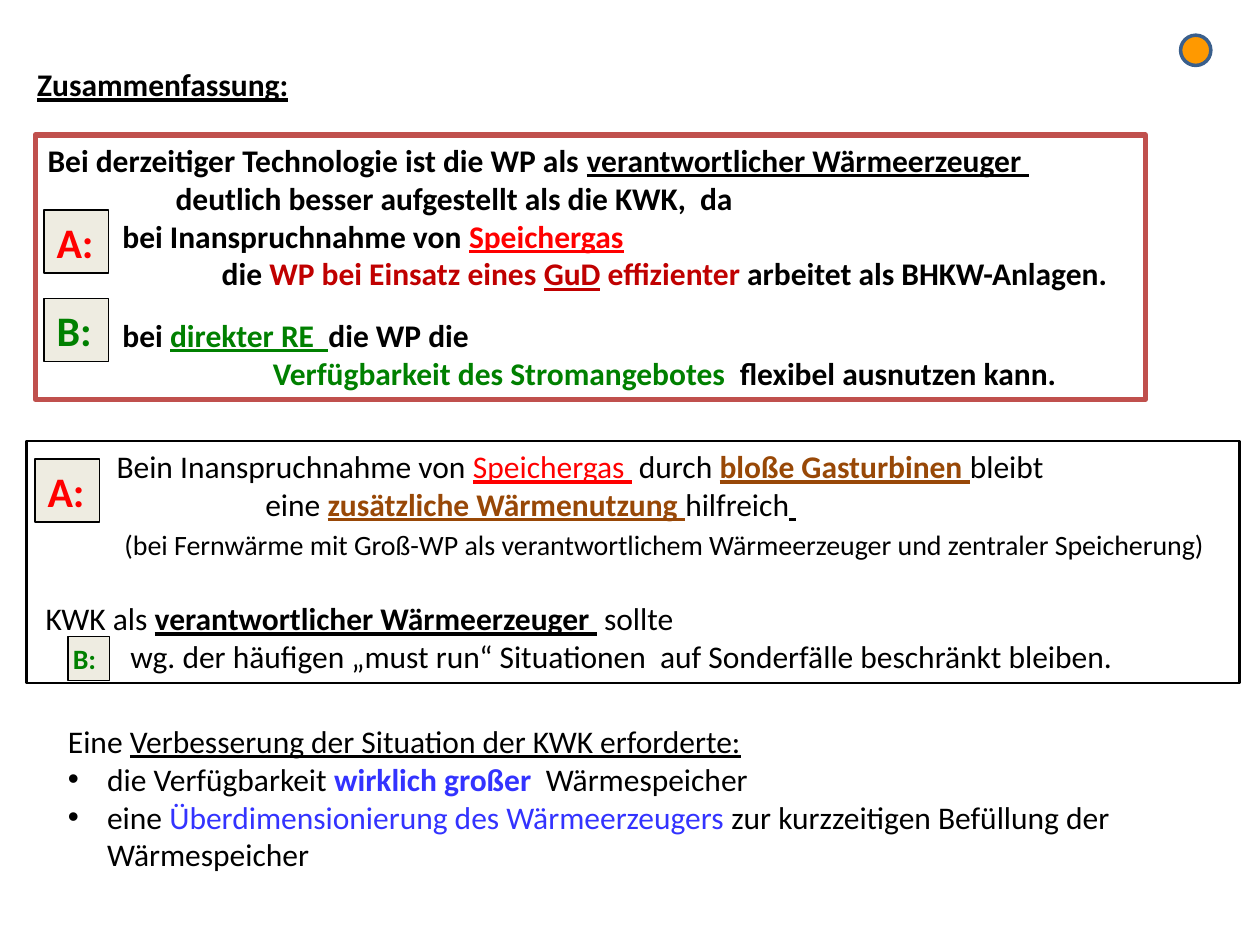
from dataclasses import dataclass

from lxml import etree
from pptx import Presentation
from pptx.dml.color import RGBColor
from pptx.enum.shapes import MSO_SHAPE
from pptx.enum.text import MSO_ANCHOR, PP_ALIGN
from pptx.oxml.ns import qn
from pptx.util import Cm, Pt

RECTANGLE = MSO_SHAPE.RECTANGLE
OVAL = MSO_SHAPE.OVAL
TOP = MSO_ANCHOR.TOP
LEFT = PP_ALIGN.LEFT


@dataclass(frozen=True)
class Theme:
    font: str = "Calibri"
    body: int = 18
    small: int = 16
    badge: int = 24
    black: str = "000000"
    red: str = "FF0000"
    dark_red: str = "C00000"
    green: str = "008000"
    brown: str = "984807"
    blue: str = "3333FF"
    frame: str = "C0504D"
    beige: str = "EEECE1"
    orange: str = "FF9900"
    navy: str = "3A5F8C"


@dataclass(frozen=True)
class Run:
    text: str
    color: str = Theme.black
    bold: bool = False
    underline: bool = False


@dataclass(frozen=True)
class Line:
    runs: tuple
    indent: float = 0
    size: int = Theme.body
    before: float = 0
    bullet: bool = False


class SlideBuilder:
    """Draws styled elements on the current slide."""

    def __init__(self, slide, theme):
        self.slide = slide
        self.theme = theme

    def shape(self, kind, box, line, width, fill=None):
        shape = self.slide.shapes.add_shape(kind, *map(Cm, box))
        shape.shadow.inherit = False
        shape.line.color.rgb = RGBColor.from_string(line)
        shape.line.width = Pt(width)
        if fill:
            shape.fill.solid()
            shape.fill.fore_color.rgb = RGBColor.from_string(fill)
        else:
            shape.fill.background()
        return shape

    def add_lines(self, shape, lines):
        frame = shape.text_frame
        frame.word_wrap = True
        frame.vertical_anchor = TOP
        for index, line in enumerate(lines):
            paragraph = frame.add_paragraph() if index else frame.paragraphs[0]
            paragraph.alignment = LEFT
            paragraph.space_before = Pt(line.before)
            properties = paragraph._p.get_or_add_pPr()
            properties.set("marL", str(Cm(line.indent)))
            properties.set("indent", str(-Cm(line.indent) if line.bullet else 0))
            if line.bullet:
                etree.SubElement(properties, qn("a:buFont"), typeface="Arial")
                etree.SubElement(properties, qn("a:buChar"), char="•")
            for part in line.runs:
                run = paragraph.add_run()
                run.text = part.text
                run.font.name = self.theme.font
                run.font.size = Pt(line.size)
                run.font.bold = part.bold
                run.font.underline = part.underline
                run.font.color.rgb = RGBColor.from_string(part.color)

    def panel(self, box, line, width, lines):
        self.add_lines(self.shape(RECTANGLE, box, line, width), lines)

    def text(self, box, lines):
        self.add_lines(self.slide.shapes.add_textbox(*map(Cm, box)), lines)

    def badge(self, box, label, color, size, inset=None):
        shape = self.shape(RECTANGLE, box, self.theme.black, 1, self.theme.beige)
        if inset is not None:
            frame = shape.text_frame
            frame.margin_left = frame.margin_right = Cm(inset)
            frame.margin_top = frame.margin_bottom = Cm(inset)
        self.add_lines(shape, [Line((Run(label, color, bold=True),), size=size)])

    def marker(self, box):
        self.shape(OVAL, box, self.theme.navy, 2, self.theme.orange)


def main():
    theme = Theme()
    presentation = Presentation()
    presentation.slide_width, presentation.slide_height = Cm(25.4), Cm(19.05)
    slide = presentation.slides.add_slide(presentation.slide_layouts[6])
    builder = SlideBuilder(slide, theme)

    builder.panel((0.71, 2.72, 22.38, 5.33), theme.frame, 3, [
        Line((Run("Bei derzeitiger Technologie ist die WP als ", bold=True),
              Run("verantwortlicher Wärmeerzeuger ", bold=True, underline=True))),
        Line((Run("deutlich besser aufgestellt als die KWK,  da", bold=True),), 2.58),
        Line((Run("bei Inanspruchnahme von ", bold=True),
              Run("Speichergas", theme.red, True, True)), 1.51),
        Line((Run("die ", bold=True),
              Run("WP bei Einsatz eines ", theme.dark_red, True),
              Run("GuD", theme.dark_red, True, True),
              Run(" effizienter ", theme.dark_red, True),
              Run("arbeitet als BHKW-Anlagen.", bold=True)), 3.51),
        Line((Run("bei ", bold=True),
              Run("direkter RE  ", theme.green, True, True),
              Run("die WP die", bold=True)), 1.51, before=13.4),
        Line((Run("Verfügbarkeit des Stromangebotes  ", theme.green, True),
              Run("flexibel ausnutzen kann.", bold=True)), 4.54),
    ])
    builder.panel((0.53, 8.89, 24.46, 4.88), theme.black, 1.5, [
        Line((Run("Bein Inanspruchnahme von "),
              Run("Speichergas ", theme.red, underline=True),
              Run(" durch "),
              Run("bloße Gasturbinen ", theme.brown, True, True),
              Run("bleibt")), 1.57),
        Line((Run("eine "),
              Run("zusätzliche Wärmenutzung ", theme.brown, True, True),
              Run("hilfreich"),
              Run(" ", bold=True, underline=True)), 4.57),
        Line((Run("(bei Fernwärme mit Groß-WP als verantwortlichem "
                  "Wärmeerzeuger und zentraler Speicherung)"),),
             1.73, theme.small, 2.5),
        Line((Run("KWK als "),
              Run("verantwortlicher Wärmeerzeuger ", bold=True, underline=True),
              Run(" sollte")), 0.14, before=22),
        Line((Run("wg. der häufigen „must run“ Situationen  "
                  "auf Sonderfälle beschränkt bleiben."),), 1.85),
    ])
    builder.text((1.12, 14.43, 22, 3.33), [
        Line((Run("Eine "),
              Run("Verbesserung der Situation der KWK erforderte:", underline=True))),
        Line((Run("die Verfügbarkeit "),
              Run("wirklich großer  ", theme.blue, True),
              Run("Wärmespeicher")), 0.79, bullet=True),
        Line((Run("eine "),
              Run("Überdimensionierung des Wärmeerzeugers ", theme.blue),
              Run("zur kurzzeitigen Befüllung der Wärmespeicher")),
             0.79, bullet=True),
    ])
    builder.text((0.5, 1.19, 7.26, 1.02),
                 [Line((Run("Zusammenfassung:", bold=True, underline=True),))])

    for left, top, label, color in (
        (0.89, 4.24, "A:", theme.red),
        (0.89, 6.02, "B:", theme.green),
        (0.71, 9.25, "A:", theme.red),
    ):
        builder.badge((left, top, 1.3, 1.27), label, color, theme.badge)
    builder.badge((1.37, 12.83, 0.84, 0.89), "B:", theme.green, theme.small, 0.1)
    builder.marker((23.8, 0.71, 0.61, 0.61))
    presentation.save("out.pptx")


if __name__ == "__main__":
    main()
